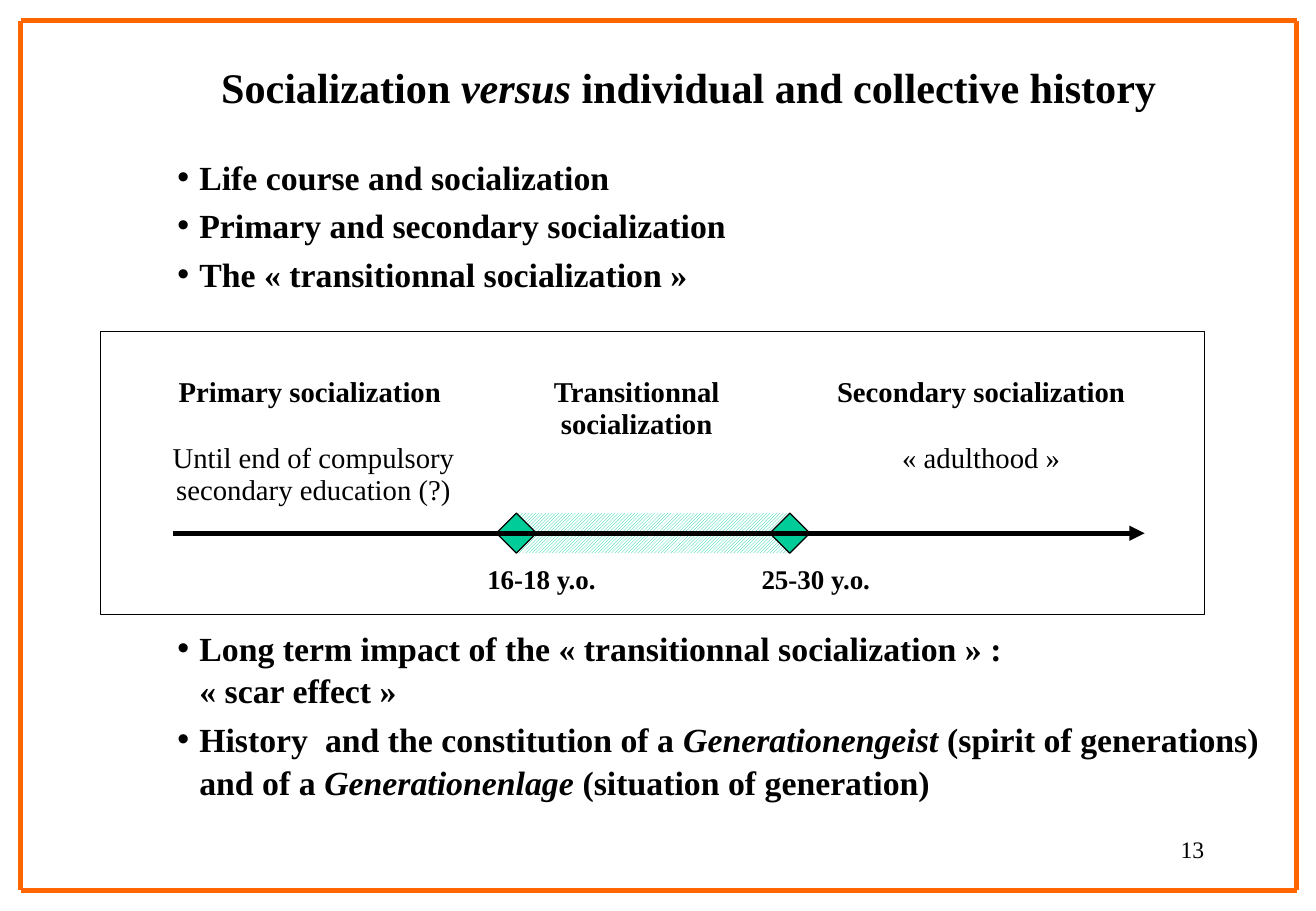
from copy import deepcopy
from dataclasses import dataclass

from lxml.etree import SubElement
from pptx import Presentation
from pptx.dml.color import RGBColor
from pptx.enum.dml import MSO_PATTERN
from pptx.enum.shapes import MSO_CONNECTOR, MSO_SHAPE
from pptx.enum.text import MSO_ANCHOR, MSO_AUTO_SIZE, PP_ALIGN
from pptx.oxml.ns import qn
from pptx.util import Inches, Pt


@dataclass(frozen=True)
class Theme:
    font: str = "Times New Roman"
    ink: RGBColor = RGBColor(0, 0, 0)
    paper: RGBColor = RGBColor(255, 255, 255)
    frame: RGBColor = RGBColor(0xFF, 0x66, 0x00)
    accent: RGBColor = RGBColor(0x00, 0xCC, 0x99)
    title: int = 25
    body: int = 20
    cell: int = 17
    age: int = 16
    number: int = 14


theme = Theme()


def write(tf, *paragraphs, size, bold=(True,), align=PP_ALIGN.LEFT,
          before=0, after=0, spacing=1.0, bullet=False):
    """Fill tf; '*' toggles italics, a newline breaks a line, bold goes by paragraph."""
    for i, text in enumerate(paragraphs):
        p = tf.paragraphs[0] if i == 0 else tf.add_paragraph()
        p.alignment, p.line_spacing = align, spacing
        p.space_before, p.space_after = Pt(before), Pt(after)
        if bullet:
            pPr = p._p.get_or_add_pPr()
            pPr.set("marL", str(Inches(0.18)))
            pPr.set("indent", str(Inches(-0.18)))
        for j, piece in enumerate(text.split("*")):
            for k, line in enumerate(piece.split("\n")):
                if k:
                    p.add_line_break()
                    p._p[-1].append(deepcopy(r._r.rPr))
                r = p.add_run()
                r.text = line
                r.font.name, r.font.size = theme.font, Pt(size)
                r.font.bold, r.font.italic = bold[i % len(bold)], j % 2 == 1
                r.font.color.rgb = theme.ink


def add_line(x1, y1, x2, y2, color):
    line = s.shapes.add_connector(
        MSO_CONNECTOR.STRAIGHT, Inches(x1), Inches(y1), Inches(x2), Inches(y2))
    line.line.color.rgb, line.line.width = color, Pt(3)
    SubElement(line._element.spPr, qn("a:effectLst"))
    return line


prs = Presentation()
prs.slide_width, prs.slide_height = Inches(10.83), Inches(7.5)
s = prs.slides.add_slide(prs.slide_layouts[3])

# Frame
corners = [(0.17, 0.17), (10.67, 0.17), (10.67, 7.33), (0.17, 7.33)]
for start, end in zip(corners, corners[1:] + corners[:1]):
    add_line(*start, *end, theme.frame)

# Title and bullet lists
title, upper, lower = s.placeholders
for sp, left, top, width, height in [
    (title, 1.73, 0.46, 8.4, 0.5),
    (upper, 1.37, 1.23, 9.2, 1.4),
    (lower, 1.37, 5.11, 9.2, 1.6),
]:
    sp.left, sp.top = Inches(left), Inches(top)
    sp.width, sp.height = Inches(width), Inches(height)
    tf = sp.text_frame
    tf.auto_size, tf.word_wrap = MSO_AUTO_SIZE.NONE, True
    tf.margin_left = tf.margin_right = Inches(0.09)
    tf.margin_top = tf.margin_bottom = Inches(0.04)
    tf.vertical_anchor = MSO_ANCHOR.MIDDLE if sp is title else MSO_ANCHOR.TOP

write(title.text_frame, "Socialization *versus *individual and collective history",
      size=theme.title)
bullets = dict(size=theme.body, before=3.7, spacing=1.05, bullet=True)
write(upper.text_frame,
      "Life course and socialization",
      "Primary and secondary socialization",
      "The « transitionnal socialization »", **bullets)
write(lower.text_frame,
      "Long term impact of the « transitionnal socialization » : \n« scar effect »",
      "History  and the constitution of a *Generationengeist* (spirit of generations) "
      "and of a *Generationenlage *(situation of generation)", **bullets)

# Transition period, its two limits and the box around the diagram
axis_y, mark = 4.39, 0.33
limits = [4.25, 6.5]
mark_top = axis_y - mark / 2
period = (MSO_SHAPE.RECTANGLE, limits[0], mark_top, limits[1] - limits[0], mark)
diamonds = [(MSO_SHAPE.DIAMOND, x - mark / 2, mark_top, mark, mark) for x in limits]
box = (MSO_SHAPE.RECTANGLE, 0.83, 2.73, 9.08, 2.33)
for spec_row in [period, *diamonds, box]:
    kind, *place = spec_row
    sp = s.shapes.add_shape(kind, *map(Inches, place))
    sp.shadow.inherit = False
    if spec_row is period:
        sp.fill.patterned()
        sp.fill.pattern = MSO_PATTERN.LIGHT_UPWARD_DIAGONAL
        sp.fill.fore_color.rgb, sp.fill.back_color.rgb = theme.accent, theme.paper
        sp.line.fill.background()
        continue
    if spec_row is box:
        sp.fill.background()
    else:
        sp.fill.solid()
        sp.fill.fore_color.rgb = theme.accent
    sp.line.color.rgb, sp.line.width = theme.ink, Pt(0.75)

# Stages
stages = [
    (2.82, ["Primary socialization ", "Until end of compulsory secondary education (?)"]),
    (2.5, ["Transitionnal socialization"]),
    (3.17, ["Secondary socialization", "« adulthood »"]),
]
table = s.shapes.add_table(1, len(stages), Inches(1.17), Inches(3.06),
                           Inches(8.49), Inches(1.92)).table
table.first_row = table.horz_banding = False
style = table._tbl.tblPr.find(qn("a:tableStyleId"))
style.text = "{2D5ABB26-0587-4C30-8999-92F81FD0307C}"  # no style, no grid
for col, (width, texts) in enumerate(stages):
    table.columns[col].width = Inches(width)
    cell = table.cell(0, col)
    cell.fill.background()
    cell.margin_top = cell.margin_bottom = Inches(0.04)
    write(cell.text_frame, *texts, size=theme.cell, bold=(True, False),
          align=PP_ALIGN.CENTER, after=20.4)

# Time axis
axis = add_line(1.42, axis_y, 9.42, axis_y, theme.ink)
SubElement(axis.line._get_or_add_ln(), qn("a:tailEnd"), type="triangle")

# Ages and slide number
for text, left, top, width, align, size, bold, before in [
    ("25-30 y.o.", 5.08, 4.59, 2.17, PP_ALIGN.RIGHT, theme.age, True, 3),
    ("16-18 y.o.", 3.92, 4.59, 1.17, PP_ALIGN.LEFT, theme.age, True, 3),
    ("13", 7.75, 6.83, 2.25, PP_ALIGN.RIGHT, theme.number, False, 0),
]:
    tf = s.shapes.add_textbox(Inches(left), Inches(top), Inches(width), Inches(0.5)).text_frame
    tf.word_wrap = True
    tf.margin_left = tf.margin_right = Inches(0.09)
    tf.margin_top = tf.margin_bottom = Inches(0.04)
    write(tf, text, size=size, bold=(bold,), align=align, before=before)

prs.save("out.pptx")
